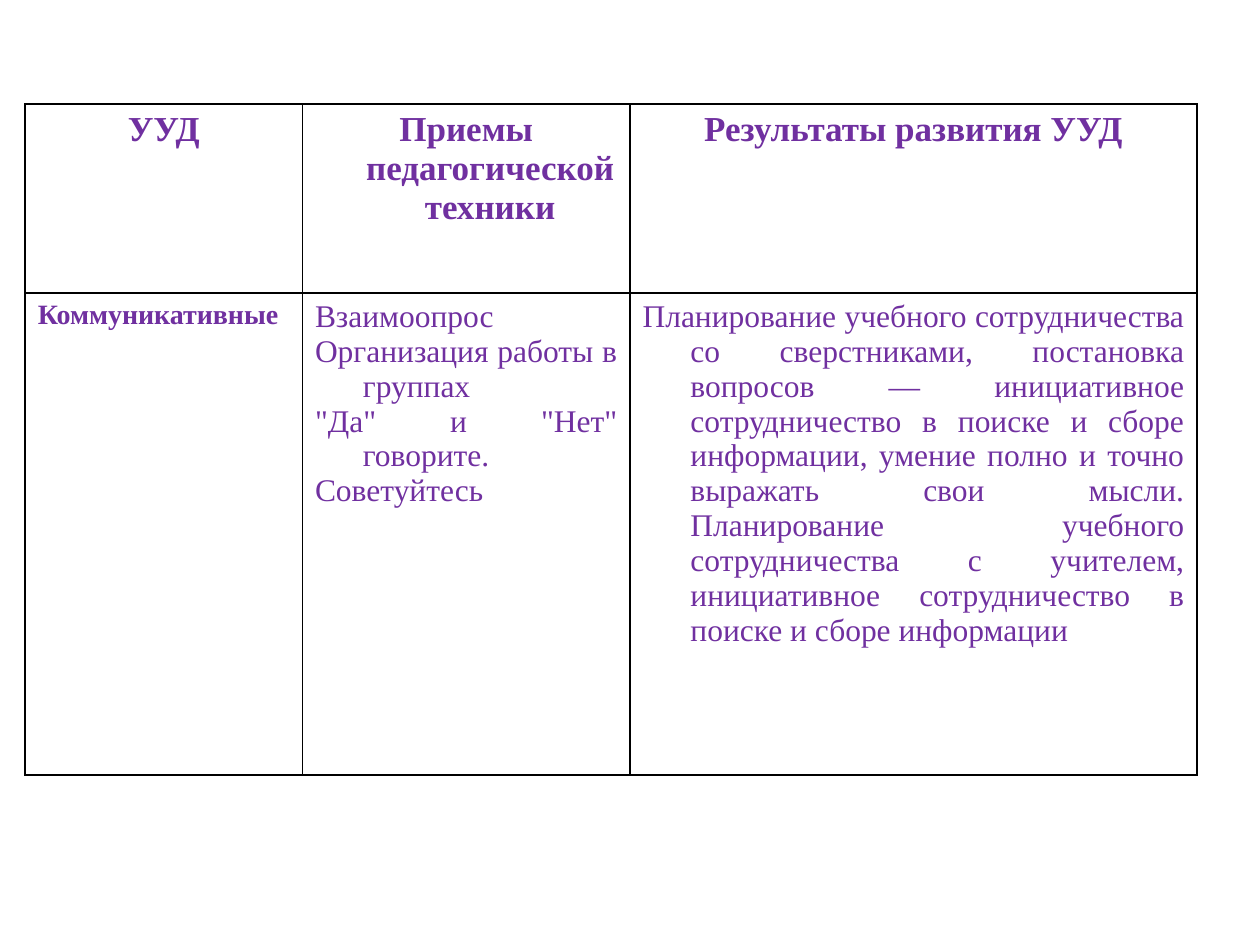
"""Build a one-slide deck with a table of learning skills, methods and results."""
import pptx
import pptx.dml.color
import pptx.enum.text
import pptx.oxml
import pptx.oxml.ns
import pptx.util

VIOLET = pptx.dml.color.RGBColor(0x70, 0x30, 0xA0)
BLACK = pptx.dml.color.RGBColor(0, 0, 0)
CENTER = pptx.enum.text.PP_ALIGN.CENTER
JUSTIFY = pptx.enum.text.PP_ALIGN.JUSTIFY

HEADS = ["УУД", "Приемы педагогической техники", "Результаты развития УУД"]
SKILL = "Коммуникативные"
METHODS = [
    "Взаимоопрос",
    "Организация работы в группах",
    '"Да" и "Нет" говорите. ',
    "Советуйтесь",
]
RESULT = (
    "Планирование учебного сотрудничества со сверстниками, постановка вопросов — "
    "инициативное сотрудничество в поиске и сборе информации, умение полно и точно "
    "выражать свои мысли. Планирование учебного сотрудничества с учителем, "
    "инициативное сотрудничество в поиске и сборе информации"
)


class Page:
    font = "Times New Roman"
    ink = VIOLET
    rule = BLACK
    hang = pptx.util.Inches(0.38)

    def __init__(self, deck):
        self.wide, self.high = deck.slide_width, deck.slide_height
        self.slide = deck.slides.add_slide(deck.slide_layouts[6])

    def table(self, left, top, cols, rows):
        widths = [round(self.wide * share) for share in cols]
        heights = [round(self.high * share) for share in rows]
        grid = self.slide.shapes.add_table(
            len(rows), len(cols), round(self.wide * left), round(self.high * top),
            sum(widths), sum(heights),
        ).table
        grid.first_row = grid.horz_banding = False
        for col, width in zip(grid.columns, widths):
            col.width = width
        for row, height in zip(grid.rows, heights):
            row.height = height
        return grid

    def border(self, cell):
        props = cell._tc.get_or_add_tcPr()
        for side in ("lnL", "lnR", "lnT", "lnB"):
            props.append(pptx.oxml.parse_xml(
                f'<a:{side} {pptx.oxml.ns.nsdecls("a")} w="{pptx.util.Pt(1)}">'
                f'<a:solidFill><a:srgbClr val="{self.rule}"/></a:solidFill></a:{side}>'
            ))

    def cell(self, cell, lines, size, bold, align):
        self.border(cell)
        cell.fill.background()
        cell.text_frame.text = "\n".join(lines)
        for para in cell.text_frame.paragraphs:
            para.alignment = align
            props = para._p.get_or_add_pPr()
            props.set("marL", str(self.hang))
            props.set("indent", str(-self.hang))
            for run in para.runs:
                run.font.name = self.font
                run.font.size = pptx.util.Pt(size)
                run.font.bold = bold
                run.font.color.rgb = self.ink


def main():
    deck = pptx.Presentation()
    deck.slide_width = pptx.util.Inches(10)
    deck.slide_height = pptx.util.Inches(7.5)
    page = Page(deck)
    grid = page.table(0.02, 0.11, [0.22, 0.26, 0.45], [0.2, 0.51])
    for col, head in enumerate(HEADS):
        page.cell(grid.cell(0, col), [head], 20, True, CENTER)
    page.cell(grid.cell(1, 0), [SKILL], 16, True, JUSTIFY)
    page.cell(grid.cell(1, 1), METHODS, 18, False, JUSTIFY)
    page.cell(grid.cell(1, 2), [RESULT], 18, False, JUSTIFY)
    deck.save("out.pptx")


if __name__ == "__main__":
    main()
